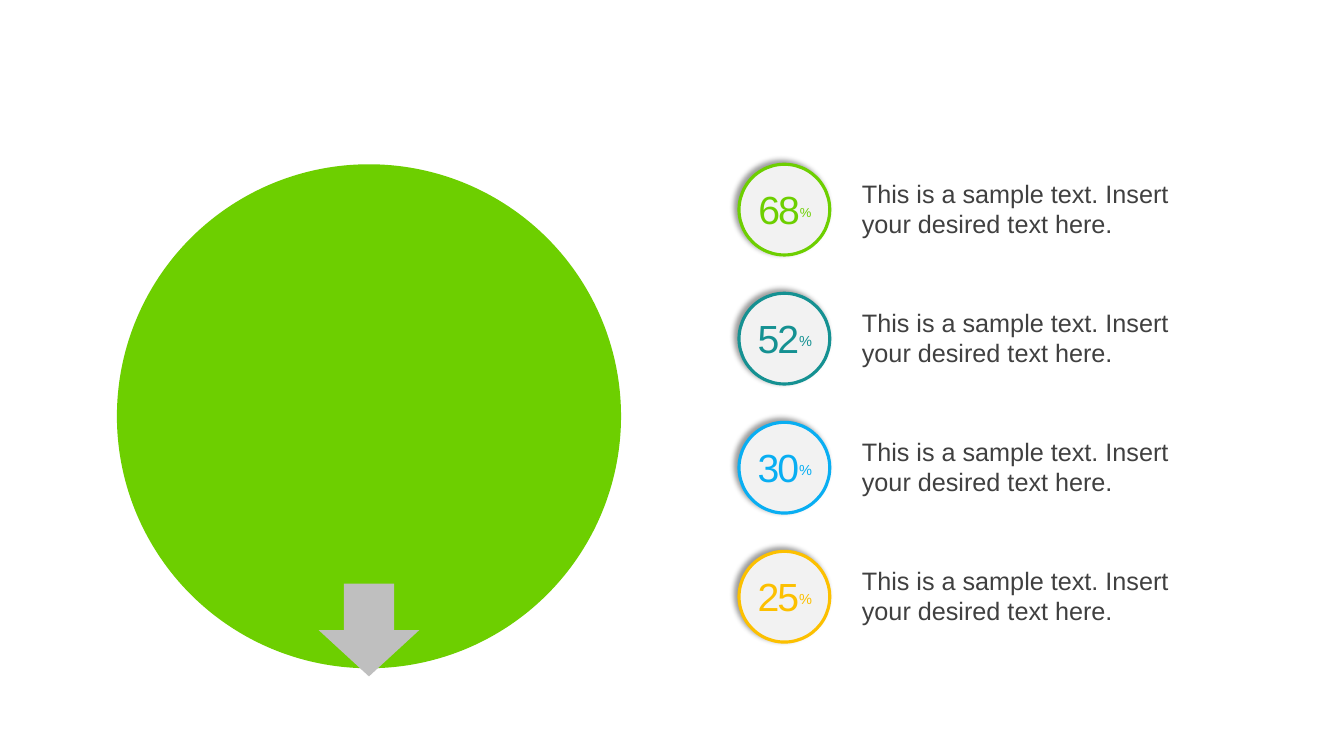
from pptx import Presentation
from pptx import util as u
from pptx.dml.color import RGBColor
from pptx.enum import shapes, text
from pptx.oxml import parse_xml
from pptx.oxml.ns import nsdecls, qn

PX = 9144  # EMU per px, 100 px to the inch


def color(value):
    return RGBColor.from_string(value)


class SlideBuilder:
    font_name = "Arial"
    body_color = "404040"
    badge_fill = "F2F2F2"

    def __init__(self, deck):
        self.page = deck.slides.add_slide(deck.slide_layouts[6])

    def shape(self, kind, left, top, width, height, fill, line=None):
        shape = self.page.shapes.add_shape(
            kind, left * PX, top * PX, width * PX, height * PX)
        shape.shadow.inherit = False
        shape.fill.solid()
        shape.fill.fore_color.rgb = color(fill)
        if line:
            shape.line.color.rgb = color(line)
            shape.line.width = u.Pt(2.25)
        else:
            shape.line.fill.background()
        return shape

    def badge(self, left, top, size, line):
        badge = self.shape(shapes.MSO_SHAPE.OVAL, left, top, size, size,
                           self.badge_fill, line)
        # Soft shadow towards the upper left
        badge._element.spPr.find(qn("a:effectLst")).append(parse_xml(
            f'<a:outerShdw {nsdecls("a")} blurRad="{u.Pt(4)}" dist="{u.Pt(3)}" '
            'dir="13500000" algn="br" rotWithShape="0"><a:srgbClr val="000000">'
            '<a:alpha val="40000"/></a:srgbClr></a:outerShdw>'))

    def text_box(self, left, top, width, height):
        box = self.page.shapes.add_textbox(
            left * PX, top * PX, width * PX, height * PX)
        box.text_frame.word_wrap = True
        box.text_frame.auto_size = text.MSO_AUTO_SIZE.SHAPE_TO_FIT_TEXT
        return box.text_frame.paragraphs[0]

    def span(self, para, words, size, fill):
        span = para.add_run()
        span.text = words
        span.font.name = self.font_name
        span.font.size = u.Pt(size)
        span.font.color.rgb = color(fill)
        return span

    def percentage(self, left, top, number, sign_size, fill):
        para = self.text_box(left, top, 79, 57)
        para.alignment = text.PP_ALIGN.CENTER
        digits = self.span(para, number, 28, fill)
        sign = self.span(para, "%", sign_size, fill)
        for span in (digits, sign):
            span.font._element.set("spc", "-150")
        sign.font._element.set("baseline", "30000")

    def description(self, left, top, words):
        self.span(self.text_box(left, top, 349, 71), words, 18, self.body_color)


def main():
    deck = Presentation()
    deck.slide_width, deck.slide_height = 1333 * PX, 750 * PX
    slide = SlideBuilder(deck)

    # Large circle with the arrow at its foot
    slide.shape(shapes.MSO_SHAPE.OVAL, 116, 163, 500, 500, "6DCF00")
    slide.shape(shapes.MSO_SHAPE.DOWN_ARROW, 316, 579, 100, 92, "BFBFBF")

    # Percentage rows
    rows = [("68", 16, "6DCF00"), ("52", 18, "159192"),
            ("30", 18, "09AEF2"), ("25", 18, "FCC000")]
    for index, (number, sign_size, fill) in enumerate(rows):
        top = 163 + 128 * index
        slide.badge(733, top, 90, fill)
        slide.percentage(739, top + 16, number, sign_size, fill)
        slide.description(
            845, top + 9, "This is a sample text. Insert your desired text here.")

    deck.save("out.pptx")


if __name__ == "__main__":
    main()
